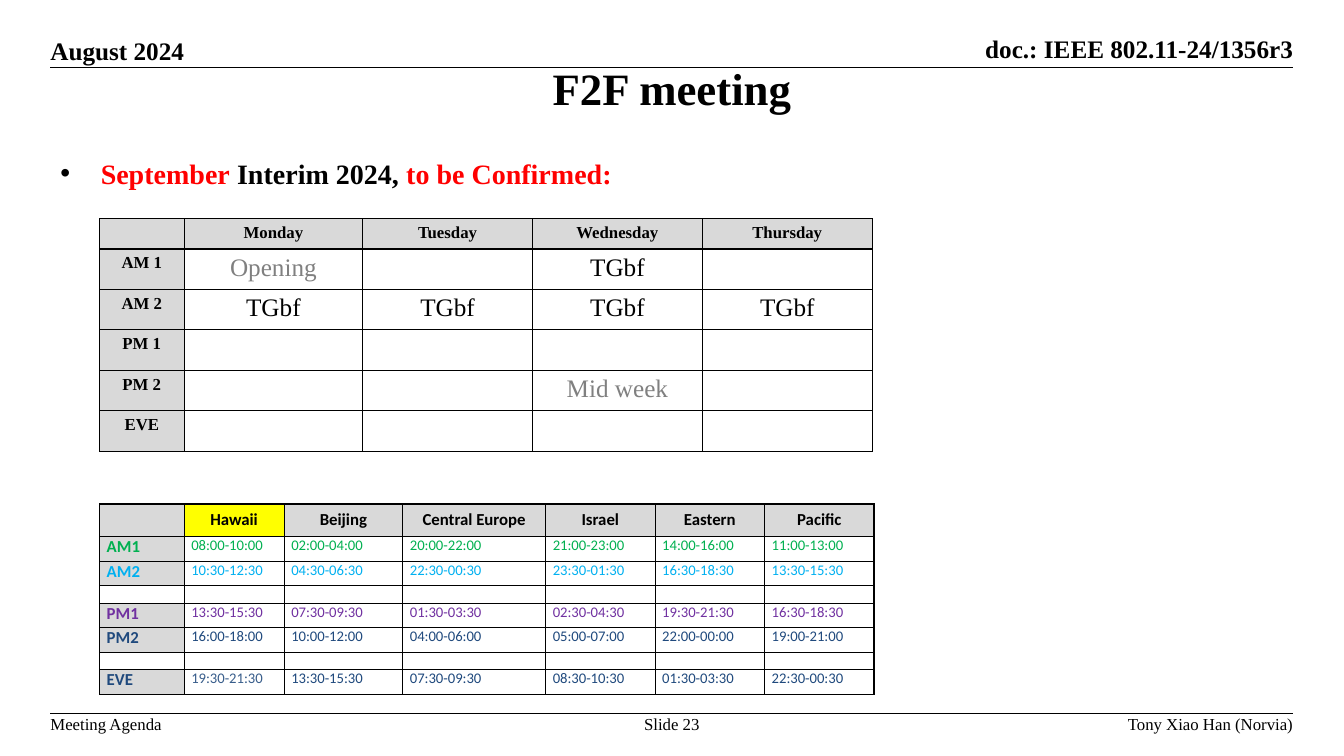
from lxml.etree import SubElement
from pptx import Presentation
from pptx.dml.color import RGBColor
from pptx.enum.shapes import MSO_CONNECTOR
from pptx.enum.text import MSO_ANCHOR, PP_ALIGN
from pptx.oxml.ns import qn
from pptx.util import Cm, Pt

BLACK = RGBColor(0x00, 0x00, 0x00)
RED = RGBColor(0xFF, 0x00, 0x00)
GRAY = RGBColor(0x80, 0x80, 0x80)
LIGHT_GRAY = RGBColor(0xD9, 0xD9, 0xD9)
YELLOW = RGBColor(0xFF, 0xFF, 0x00)
GREEN = RGBColor(0x00, 0xB0, 0x50)
SKY = RGBColor(0x00, 0xB0, 0xF0)
PURPLE = RGBColor(0x70, 0x30, 0xA0)
NAVY = RGBColor(0x1F, 0x49, 0x7D)
STEEL = RGBColor(0x38, 0x5D, 0x8B)
SERIF, SANS = "Times New Roman", "Calibri"
LEFT, CENTER, RIGHT = PP_ALIGN.LEFT, PP_ALIGN.CENTER, PP_ALIGN.RIGHT
TOP, MIDDLE, BOTTOM = MSO_ANCHOR.TOP, MSO_ANCHOR.MIDDLE, MSO_ANCHOR.BOTTOM

# Content: text, (left, top, width, height) in cm, size, bold, alignment, anchor
LABELS = [
    ("doc.: IEEE 802.11-24/1356r3", (23.47, 0.84, 9.12, 0.76), 18, True, RIGHT, BOTTOM),
    ("August 2024", (1.27, 0.89, 3.4, 0.76), 18, True, LEFT, BOTTOM),
    ("Meeting Agenda", (1.27, 17.98, 2.84, 0.51), 12, False, LEFT, TOP),
    ("Slide 23", (16.18, 17.98, 1.5, 0.51), 12, False, CENTER, TOP),
    ("Tony Xiao Han (Norvia)", (22.4, 17.98, 10.19, 0.51), 12, False, RIGHT, TOP),
    ("F2F meeting", (0, 1.47, 33.87, 1.47), 32, True, CENTER, MIDDLE),
]
RULE_LEFT, RULE_RIGHT = 1.27, 32.59
RULE_TOPS = (1.7, 17.98)
HEADLINE = [("September", RED), (" Interim 2024, ", BLACK), ("to be Confirmed: ", RED)]

SESSIONS = [
    ("", "Monday", "Tuesday", "Wednesday", "Thursday"),
    ("AM 1", "Opening", "", "TGbf", ""),
    ("AM 2", "TGbf", "TGbf", "TGbf", "TGbf"),
    ("PM 1", "", "", "", ""),
    ("PM 2", "", "", "Mid week", ""),
    ("EVE", "", "", "", ""),
]
SESSION_WIDTHS = (2.13, 4.5, 4.28, 4.28, 4.28)
PLENARIES = ("Opening", "Mid week")

ZONES = [
    ("", "Hawaii", "Beijing", "Central Europe", "Israel", "Eastern", "Pacific"),
    ("AM1", "08:00-10:00", "02:00-04:00", "20:00-22:00", "21:00-23:00", "14:00-16:00", "11:00-13:00"),
    ("AM2", "10:30-12:30", "04:30-06:30", "22:30-00:30", "23:30-01:30", "16:30-18:30", "13:30-15:30"),
    ("",) * 7,
    ("PM1", "13:30-15:30", "07:30-09:30", "01:30-03:30", "02:30-04:30", "19:30-21:30", "16:30-18:30"),
    ("PM2", "16:00-18:00", "10:00-12:00", "04:00-06:00", "05:00-07:00", "22:00-00:00", "19:00-21:00"),
    ("",) * 7,
    ("EVE", "19:30-21:30", "13:30-15:30", "07:30-09:30", "08:30-10:30", "01:30-03:30", "22:30-00:30"),
]
ZONE_WIDTHS = (2.13, 2.52, 2.99, 3.6, 2.76, 2.76, 2.76)
SLOT_COLORS = {"AM1": GREEN, "AM2": SKY, "PM1": PURPLE, "PM2": NAVY, "EVE": NAVY}


def set_font(font, size, bold, color, name=SERIF):
    font.size, font.bold, font.name = Pt(size), bold, name
    font.color.rgb = color


def add_box(page, bounds, margins=(0, 0)):
    box = page.shapes.add_textbox(*map(Cm, bounds))
    frame = box.text_frame
    frame.word_wrap = True
    frame.margin_left = frame.margin_right = Cm(margins[0])
    frame.margin_top = frame.margin_bottom = Cm(margins[1])
    return frame


def add_grid(page, rows, left, top, widths, heights):
    shape = page.shapes.add_table(len(rows), len(widths), Cm(left), Cm(top),
                                  Cm(sum(widths)), Cm(sum(heights)))
    table = shape.table
    table.first_row = table.horz_banding = False
    for column, width in zip(table.columns, widths):
        column.width = Cm(width)
    for row, height in zip(table.rows, heights):
        row.height = Cm(height)
    return table


def style_cell(cell, text, fill, size, bold, color, name, alignment):
    properties = cell._tc.get_or_add_tcPr()
    for side in ("a:lnL", "a:lnR", "a:lnT", "a:lnB"):
        border = SubElement(properties, qn(side), w=str(Pt(1)))
        SubElement(SubElement(border, qn("a:solidFill")), qn("a:srgbClr"), val=str(BLACK))
    if fill is None:
        cell.fill.background()
    else:
        cell.fill.solid()
        cell.fill.fore_color.rgb = fill
    para = cell.text_frame.paragraphs[0]
    para.alignment = alignment
    if text:
        para.text = text
        set_font(para.font, size, bold, color, name)
    else:
        SubElement(para._p, qn("a:endParaRPr"), sz="800")


deck = Presentation()
deck.slide_width, deck.slide_height = Cm(33.87), Cm(19.05)
page = deck.slides.add_slide(deck.slide_layouts[6])

# Header and footer rules
for top in RULE_TOPS:
    rule = page.shapes.add_connector(MSO_CONNECTOR.STRAIGHT, Cm(RULE_LEFT), Cm(top),
                                     Cm(RULE_RIGHT), Cm(top))
    rule.line.color.rgb = BLACK
    rule.line.width = Pt(1)
    SubElement(rule._element.spPr, qn("a:effectLst"))

# Header, footer and title
for text, bounds, size, bold, alignment, anchor in LABELS:
    frame = add_box(page, bounds)
    frame.word_wrap = False
    frame.vertical_anchor = anchor
    para = frame.paragraphs[0]
    para.text = text
    para.alignment = alignment
    set_font(para.font, size, bold, BLACK)

# Bulleted headline
para = add_box(page, (1.27, 3.81, 18.21, 2.34), (0.25, 0.13)).paragraphs[0]
para.alignment = PP_ALIGN.JUSTIFY
bullet = para._p.get_or_add_pPr()
bullet.set("marL", str(Cm(1.02)))
bullet.set("indent", str(Cm(-1.02)))
SubElement(SubElement(bullet, qn("a:buClr")), qn("a:srgbClr"), val=str(BLACK))
SubElement(bullet, qn("a:buFont"), typeface="Arial")
SubElement(bullet, qn("a:buChar"), char="•")
for text, color in HEADLINE:
    span = para.add_run()
    span.text = text
    set_font(span.font, 20, True, color)

# Weekly sessions
table = add_grid(page, SESSIONS, 2.51, 5.51, SESSION_WIDTHS, [0.76] + [1.02] * 5)
for i, row in enumerate(SESSIONS):
    for j, text in enumerate(row):
        heading = i == 0 or j == 0
        style_cell(table.cell(i, j), text, LIGHT_GRAY if heading else None,
                   12 if heading else 18, heading,
                   GRAY if text in PLENARIES else BLACK, SERIF, CENTER)

# Session hours by time zone
heights = [0.82] + [0.62 if row[0] else 0.44 for row in ZONES[1:]]
table = add_grid(page, ZONES, 2.51, 12.7, ZONE_WIDTHS, heights)
for i, row in enumerate(ZONES):
    for j, text in enumerate(row):
        cell = table.cell(i, j)
        cell.margin_left = cell.margin_right = Cm(0.18)
        cell.margin_top = cell.margin_bottom = 0
        cell.vertical_anchor = MIDDLE if i == 0 else TOP
        heading = i == 0 or (j == 0 and text != "")
        fill = YELLOW if text == "Hawaii" else LIGHT_GRAY if heading else None
        color = STEEL if (row[0], j) == ("EVE", 1) else SLOT_COLORS.get(row[0], BLACK)
        style_cell(cell, text, fill, 12 if heading else 10.5, heading, color, SANS,
                   CENTER if i == 0 else LEFT)

deck.save("out.pptx")
